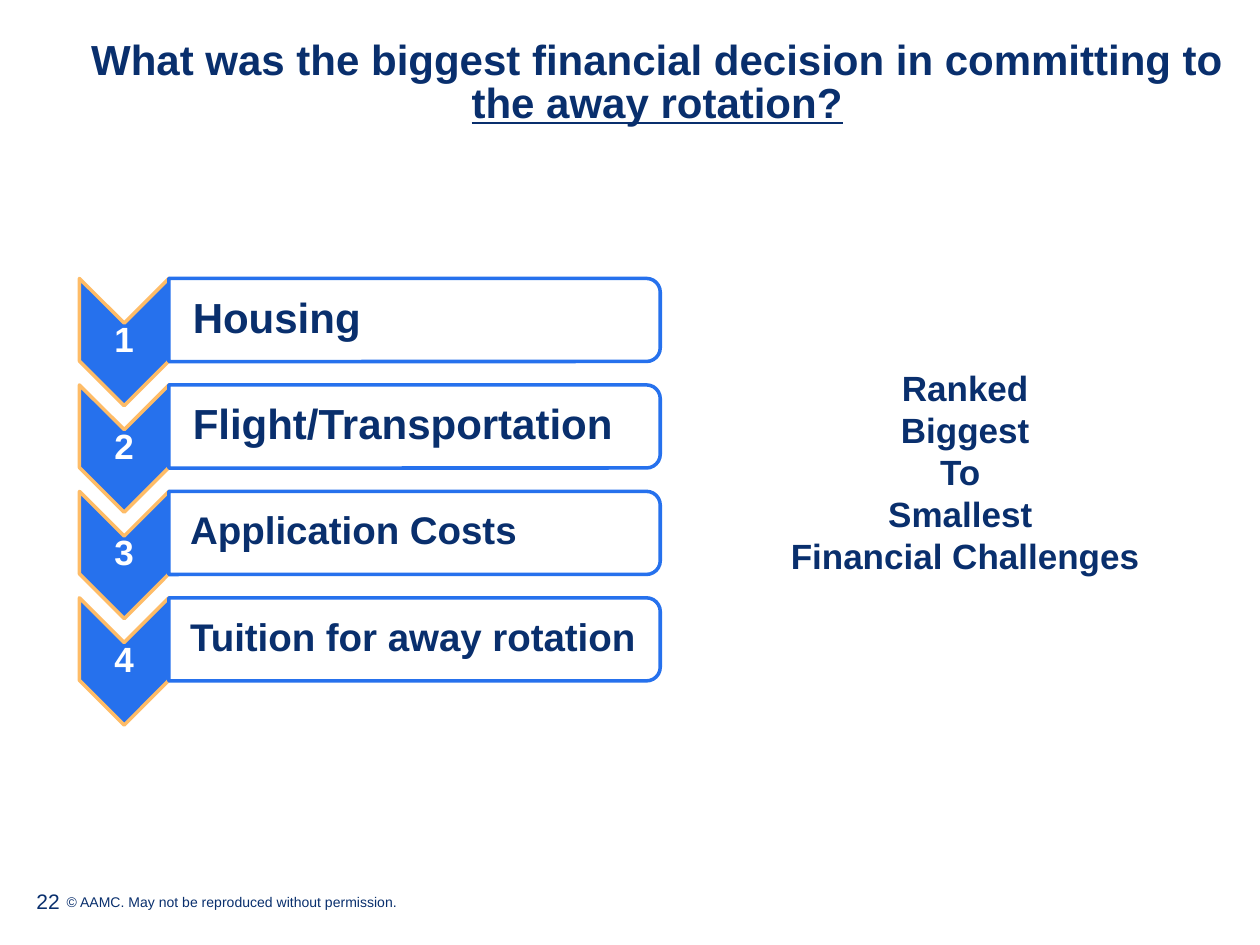
from dataclasses import dataclass

from pptx import Presentation
from pptx.dml.color import RGBColor
from pptx.enum.shapes import MSO_SHAPE as Kind
from pptx.enum.text import MSO_ANCHOR as Anchor, MSO_AUTO_SIZE as Fit, PP_ALIGN as Align
from pptx.util import Inches, Pt

FONT = "Arial"
HUES = {"navy": "092F6D", "blue": "2671ED", "gold": "FEBC67", "white": "FFFFFF"}
TOP, STEP = 2.21, 0.845
LEFT, EDGE = 0.63, 1.34


@dataclass
class Rank:
    label: str
    size: int
    inset: float


@dataclass
class Style:
    size: int
    hue: str = "navy"
    bold: bool = True
    align: Align = Align.LEFT
    line: float = 1.0


RANKS = [
    Rank("Housing", 24, 0.19),
    Rank("Flight/Transportation", 24, 0.19),
    Rank("Application Costs", 22, 0.17),
    Rank("Tuition for away rotation", 22, 0.17),
]


def tint(name: str) -> RGBColor:
    return RGBColor.from_string(HUES[name])


def set_frame(frame, pads: tuple, anchor: Anchor) -> None:
    frame.word_wrap = True
    frame.auto_size = Fit.NONE
    frame.vertical_anchor = anchor
    (frame.margin_left, frame.margin_top,
     frame.margin_right, frame.margin_bottom) = map(Inches, pads)


def add_run(para, text: str, style: Style, under: bool = False) -> None:
    para.alignment = style.align
    para.line_spacing = style.line
    run = para.add_run()
    run.text = text
    font = run.font
    font.name, font.size, font.bold = FONT, Pt(style.size), style.bold
    font.color.rgb = tint(style.hue)
    if under:
        font.underline = True


def add_text(slide, box: tuple, lines: list, style: Style,
             pads: tuple = (0.1, 0.05, 0.1, 0.05), anchor: Anchor = Anchor.TOP) -> None:
    frame = slide.shapes.add_textbox(*map(Inches, box)).text_frame
    set_frame(frame, pads, anchor)
    for i, text in enumerate(lines):
        para = frame.add_paragraph() if i else frame.paragraphs[0]
        add_run(para, text, style)


def add_turned(slide, kind: Kind, box: tuple, fill: str, edge: str) -> None:
    x, y, wide, high = box
    shape = slide.shapes.add_shape(
        kind, Inches(x + (wide - high) / 2), Inches(y + (high - wide) / 2),
        Inches(high), Inches(wide))
    shape.rotation = 90
    shape.shadow.inherit = False
    shape.fill.solid()
    shape.fill.fore_color.rgb = tint(fill)
    shape.line.color.rgb = tint(edge)
    shape.line.width = Pt(2)


def add_rank(slide, i: int, rank: Rank) -> None:
    y = TOP + i * STEP
    add_turned(slide, Kind.CHEVRON, (LEFT, y, EDGE - LEFT, 1.01), "blue", "gold")
    add_text(slide, (LEFT, y + 0.35, EDGE - LEFT, 0.3), [str(i + 1)],
             Style(20, "white", align=Align.CENTER, line=0.9), (0.01,) * 4, Anchor.MIDDLE)
    add_turned(slide, Kind.ROUND_2_SAME_RECTANGLE, (EDGE, y, 3.9, 0.66), "white", "blue")
    add_text(slide, (EDGE, y + 0.03, 3.87, 0.59), [rank.label],
             Style(rank.size, line=0.9), (rank.inset, 0.02, 0.02, 0.02), Anchor.MIDDLE)


def add_title(slide) -> None:
    title = slide.shapes.title
    title.left, title.top, title.width, title.height = map(Inches, (LEFT, 0.33, 9.17, 0.68))
    set_frame(title.text_frame, (0,) * 4, Anchor.BOTTOM)
    para = title.text_frame.paragraphs[0]
    style = Style(24, align=Align.CENTER, line=0.85)
    add_run(para, "What was the biggest financial decision in committing to ", style)
    add_run(para, "the away rotation?", style, under=True)


def main() -> None:
    deck = Presentation()
    deck.slide_width, deck.slide_height = Inches(10), Inches(7.5)
    slide = deck.slides.add_slide(deck.slide_layouts[5])
    add_text(slide, (0.43, 7.04, 8.22, 0.23),
             ["© AAMC. May not be reproduced without permission."], Style(8, bold=False))
    add_title(slide)
    add_text(slide, (0.19, 6.95, 2.25, 0.4), ["22"], Style(12, bold=False),
             anchor=Anchor.MIDDLE)
    for i, rank in enumerate(RANKS):
        add_rank(slide, i, rank)
    add_text(slide, (6.05, 2.86, 3.22, 1.78),
             ["Ranked", "Biggest", "To ", "Smallest ", "Financial Challenges"],
             Style(20, align=Align.CENTER))
    deck.save("out.pptx")


if __name__ == "__main__":
    main()
